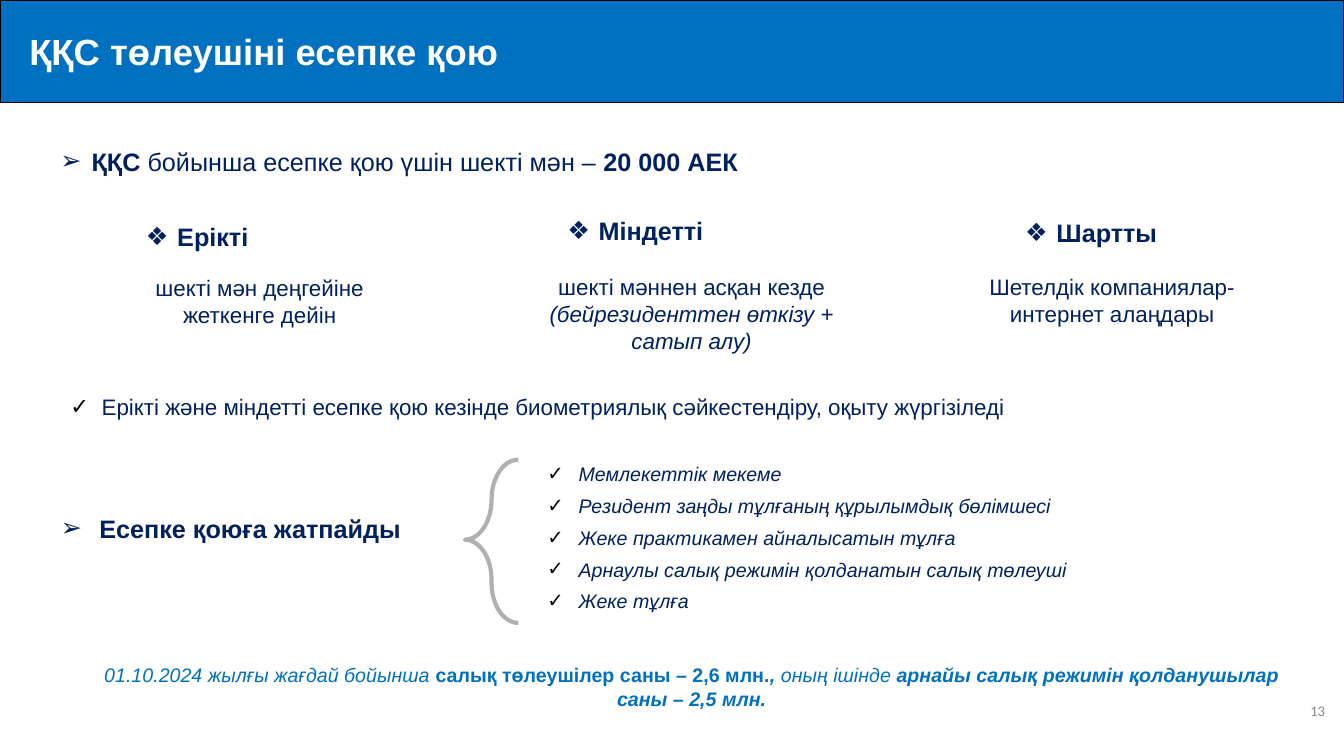
from dataclasses import dataclass

from lxml.etree import SubElement
from pptx import Presentation
from pptx.dml.color import RGBColor
from pptx.enum.shapes import MSO_SHAPE
from pptx.enum.text import MSO_ANCHOR, PP_ALIGN
from pptx.oxml.ns import qn
from pptx.slide import Slide
from pptx.util import Emu, Pt

PX = 9144  # 100 px to the inch

BLUE = RGBColor(0x00, 0x70, 0xC0)
NAVY = RGBColor(0x00, 0x20, 0x60)
BLACK = RGBColor(0x00, 0x00, 0x00)
WHITE = RGBColor(0xFF, 0xFF, 0xFF)
GREY = RGBColor(0x7C, 0x7C, 0x7C)
PAGE_GREY = RGBColor(0x8C, 0x8C, 0x8C)


@dataclass(frozen=True)
class Span:
    text: str
    bold: bool = False
    italic: bool = False


@dataclass(frozen=True)
class Bullet:
    symbol: str
    color: RGBColor = NAVY
    indent: int = 31


@dataclass(frozen=True)
class Block:
    """A text box; each paragraph is a tuple of spans."""
    box: tuple[int, int, int, int]
    paragraphs: tuple[tuple[Span, ...], ...]
    size: float
    color: RGBColor = NAVY
    align: PP_ALIGN = PP_ALIGN.LEFT
    bullet: Bullet | None = None
    space_before: int = 0
    wrap: bool = True
    anchor: MSO_ANCHOR = MSO_ANCHOR.TOP
    font: str = "Arial"


@dataclass(frozen=True)
class Registration:
    """A kind of registration: its heading and the text below."""
    heading: str
    heading_box: tuple[int, int, int, int]
    detail: tuple[tuple[Span, ...], ...]
    detail_box: tuple[int, int, int, int]


ARROW = Bullet("➢")
DIAMOND = Bullet("❖")
CHECK = Bullet("✓", BLACK)

REGISTRATIONS = (
    Registration("Ерікті", (135, 215, 123, 40),
                 ((Span("шекті мән деңгейіне"),), (Span("жеткенге дейін"),)),
                 (95, 267, 325, 64)),
    Registration("Міндетті", (553, 209, 168, 40),
                 ((Span("шекті мәннен асқан кезде "),
                   Span("(бейрезиденттен өткізу + сатып алу)", italic=True)),),
                 (508, 266, 356, 91)),
    Registration("Шартты", (1007, 211, 164, 40),
                 ((Span("Шетелдік компаниялар-"),), (Span("интернет алаңдары"),)),
                 (924, 266, 358, 64)),
)

EXEMPT = (
    "Мемлекеттік мекеме",
    "Резидент заңды тұлғаның құрылымдық бөлімшесі",
    "Жеке практикамен айналысатын тұлға",
    "Арнаулы салық режимін қолданатын салық төлеуші",
    "Жеке тұлға",
)

STATEMENTS = (
    Block((50, 140, 702, 40),
          ((Span("ҚҚС ", bold=True), Span("бойынша есепке қою үшін шекті мән – "),
            Span("20 000 АЕК", bold=True)),),
          18, bullet=ARROW, wrap=False),
    Block((60, 385, 1201, 37),
          ((Span("Ерікті және міндетті есепке қою кезінде биометриялық "
                 "сәйкестендіру, оқыту жүргізіледі"),),),
          16, align=PP_ALIGN.JUSTIFY, bullet=CHECK),
    Block((15, 504, 428, 40), ((Span("Есепке қоюға жатпайды", bold=True),),),
          18, align=PP_ALIGN.CENTER, bullet=Bullet("➢", indent=38)),
    Block((533, 453, 708, 162),
          tuple((Span(name, italic=True),) for name in EXEMPT),
          14, bullet=CHECK, space_before=6),
    Block((82, 653, 1208, 57),
          ((Span("01.10.2024 жылғы жағдай бойынша ", italic=True),
            Span("салық төлеушілер саны – 2,6 млн", bold=True),
            Span("., ", bold=True, italic=True),
            Span("оның ішінде ", italic=True),
            Span("арнайы салық режимін қолданушылар саны – 2,5 млн.",
                 bold=True, italic=True)),),
          14, BLUE, PP_ALIGN.CENTER),
    Block((1199, 669, 125, 73), ((Span("13"),),), 10.5, PAGE_GREY,
          PP_ALIGN.RIGHT, anchor=MSO_ANCHOR.MIDDLE, font="Calibri"),
)


def emu(box: tuple[int, ...]) -> list[Emu]:
    return [Emu(length * PX) for length in box]


def add_bullet(paragraph, bullet: Bullet) -> None:
    properties = paragraph._p.get_or_add_pPr()
    properties.set("marL", str(bullet.indent * PX))
    properties.set("indent", str(-bullet.indent * PX))
    color = SubElement(properties, qn("a:buClr"))
    SubElement(color, qn("a:srgbClr"), val=str(bullet.color))
    SubElement(properties, qn("a:buFont"), typeface="Arial")
    SubElement(properties, qn("a:buChar"), char=bullet.symbol)


def add_block(slide: Slide, block: Block) -> None:
    frame = slide.shapes.add_textbox(*emu(block.box)).text_frame
    frame.word_wrap = block.wrap
    frame.vertical_anchor = block.anchor
    for index, spans in enumerate(block.paragraphs):
        paragraph = frame.add_paragraph() if index else frame.paragraphs[0]
        paragraph.alignment = block.align
        if block.bullet:
            add_bullet(paragraph, block.bullet)
        if index and block.space_before:
            paragraph.space_before = Pt(block.space_before)
        paragraph.font.name = block.font
        paragraph.font.size = Pt(block.size)
        paragraph.font.color.rgb = block.color
        for span in spans:
            run = paragraph.add_run()
            run.text = span.text
            run.font.bold = span.bold
            run.font.italic = span.italic


def add_registration(slide: Slide, kind: Registration) -> None:
    add_block(slide, Block(kind.heading_box, ((Span(kind.heading, bold=True),),),
                           18, bullet=DIAMOND, wrap=False))
    add_block(slide, Block(kind.detail_box, kind.detail, 16, align=PP_ALIGN.CENTER))


def format_title(slide: Slide, text: str) -> None:
    title = slide.shapes.title
    title.left, title.top, title.width, title.height = emu((0, 0, 1333, 102))
    title.fill.solid()
    title.fill.fore_color.rgb = BLUE
    title.line.color.rgb = BLACK
    title.line.width = Pt(1)
    frame = title.text_frame
    frame.text = text
    frame.vertical_anchor = MSO_ANCHOR.MIDDLE
    frame.margin_left = Emu(29 * PX)
    paragraph = frame.paragraphs[0]
    paragraph.alignment = PP_ALIGN.LEFT
    paragraph.font.name = "Arial"
    paragraph.font.size = Pt(26)
    paragraph.font.bold = True
    paragraph.font.color.rgb = WHITE


def add_brace(slide: Slide) -> None:
    brace = slide.shapes.add_shape(MSO_SHAPE.RIGHT_BRACE, *emu((461, 456, 53, 162)))
    brace.rotation = 180
    brace.adjustments[0] = 1.14
    brace.adjustments[1] = 0.51
    brace.shadow.inherit = False
    brace.fill.background()
    brace.line.color.rgb = GREY
    brace.line.width = Pt(3)
    color = brace.line._ln.find(".//" + qn("a:srgbClr"))
    SubElement(color, qn("a:alpha"), val="60000")


def main() -> None:
    presentation = Presentation()
    presentation.slide_width, presentation.slide_height = emu((1333, 750))
    slide = presentation.slides.add_slide(presentation.slide_layouts[5])
    format_title(slide, "ҚҚС төлеушіні есепке қою")
    for kind in REGISTRATIONS:
        add_registration(slide, kind)
    add_brace(slide)
    for statement in STATEMENTS:
        add_block(slide, statement)
    presentation.save("out.pptx")


if __name__ == "__main__":
    main()
